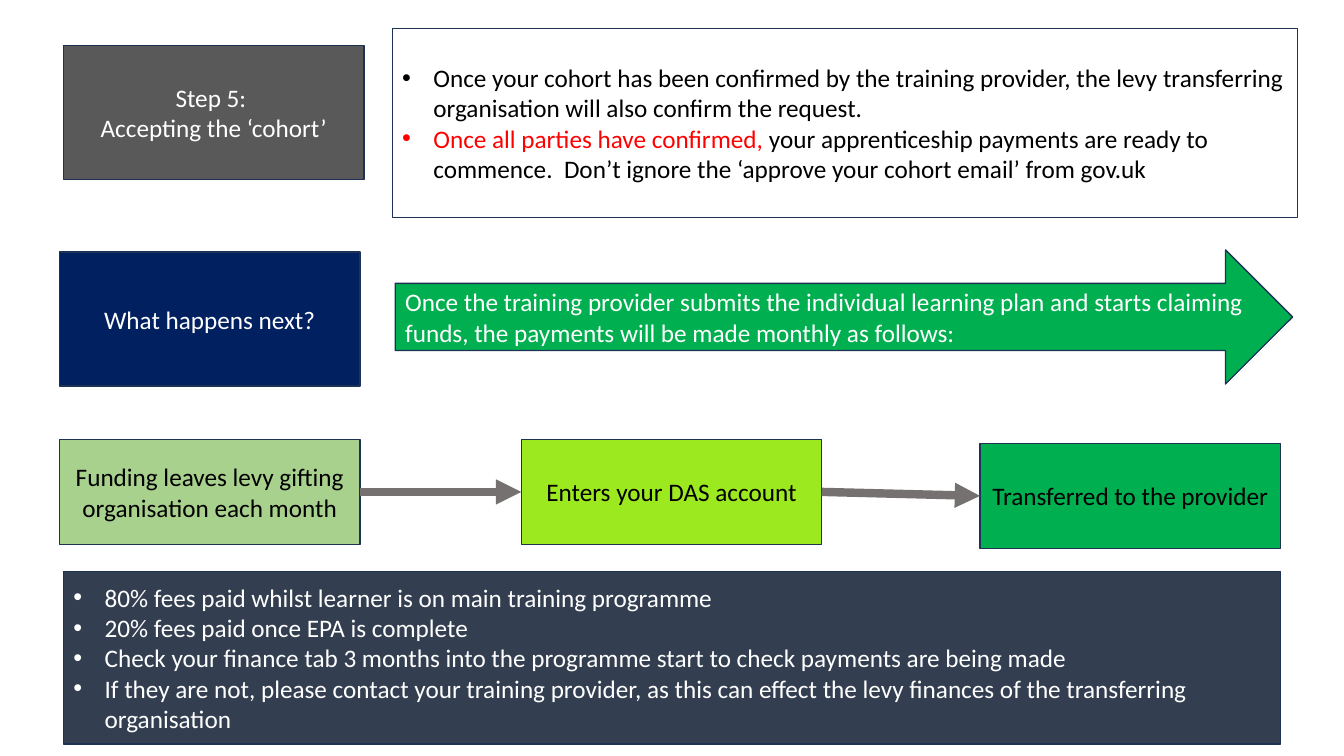
import dataclasses

import lxml.etree
import pptx
import pptx.dml.color
import pptx.enum.shapes
import pptx.enum.text
import pptx.oxml.ns
import pptx.util

Inches = pptx.util.Inches
Shape = pptx.enum.shapes.MSO_SHAPE
Align = pptx.enum.text.PP_ALIGN
qn = pptx.oxml.ns.qn


@dataclasses.dataclass(frozen=True)
class Theme:
    font: str = "Calibri"
    size: int = 18
    outline_width: int = 1
    arrow_width: int = 6
    white: str = "FFFFFF"
    black: str = "000000"
    red: str = "FF0000"
    outline: str = "1E3256"
    arrow: str = "767171"
    charcoal: str = "595959"
    navy: str = "002060"
    slate: str = "333F50"
    green: str = "00B050"
    lime: str = "9CE91F"
    sage: str = "A9D18E"


def rgb(code):
    return pptx.dml.color.RGBColor.from_string(code)


class SlideBuilder:
    def __init__(self, page, theme):
        self.page = page
        self.theme = theme

    def box(self, area, paragraphs, fill=None, color=None, align=Align.CENTER,
            bullets=False, kind=Shape.FLOWCHART_PROCESS):
        box = self.page.shapes.add_shape(kind, *map(Inches, area))
        box.shadow.inherit = False
        if fill:
            box.fill.solid()
            box.fill.fore_color.rgb = rgb(fill)
        else:
            box.fill.background()
        box.line.color.rgb = rgb(self.theme.outline)
        box.line.width = pptx.util.Pt(self.theme.outline_width)
        frame = box.text_frame
        frame.word_wrap = True
        frame.vertical_anchor = pptx.enum.text.MSO_ANCHOR.MIDDLE
        for index, content in enumerate(paragraphs):
            para = frame.add_paragraph() if index else frame.paragraphs[0]
            self.fill_paragraph(para, content, color or self.theme.white, align, bullets)
        return box

    def fill_paragraph(self, para, content, color, align, bullets):
        para.alignment = align
        if bullets:
            self.add_bullet(para)
        para.font.name = self.theme.font
        para.font.size = pptx.util.Pt(self.theme.size)
        para.font.color.rgb = rgb(color)
        spans = [(content, None)] if isinstance(content, str) else content
        for text, span_color in spans:
            span = para.add_run()
            span.text = text
            if span_color:
                span.font.color.rgb = rgb(span_color)

    def add_bullet(self, para):
        properties = para._p.get_or_add_pPr()
        indent = Inches(0.31)
        properties.set("marL", str(indent))
        properties.set("indent", str(-indent))
        lxml.etree.SubElement(properties, qn("a:buFont"), typeface="Arial")
        lxml.etree.SubElement(properties, qn("a:buChar"), char="•")

    def arrow(self, source, target):
        arrow = self.page.shapes.add_connector(
            pptx.enum.shapes.MSO_CONNECTOR.STRAIGHT, 0, 0, 0, 0)
        arrow.begin_connect(source, 3)
        arrow.end_connect(target, 1)
        arrow.line.color.rgb = rgb(self.theme.arrow)
        arrow.line.width = pptx.util.Pt(self.theme.arrow_width)
        lxml.etree.SubElement(arrow.line._get_or_add_ln(), qn("a:tailEnd"), type="triangle")
        lxml.etree.SubElement(arrow._element.spPr, qn("a:effectLst"))


def main():
    deck = pptx.Presentation()
    deck.slide_width = Inches(13.33)
    deck.slide_height = Inches(7.5)
    theme = Theme()
    builder = SlideBuilder(deck.slides.add_slide(deck.slide_layouts[6]), theme)

    builder.box((0.63, 0.45, 2.98, 1.33), ["Step 5: ", "Accepting the ‘cohort’"],
                theme.charcoal)
    builder.box((3.89, 0.28, 8.98, 1.88), [
        "Once your cohort has been confirmed by the training provider, "
        "the levy transferring organisation will also confirm the request.",
        [("Once all parties have confirmed,", theme.red),
         (" your apprenticeship payments are ready to commence.  "
          "Don’t ignore the ‘approve your cohort email’ from gov.uk", theme.black)],
    ], color=theme.black, align=Align.LEFT, bullets=True)

    builder.box((0.59, 2.5, 2.98, 1.33), ["What happens next?"], theme.navy)
    builder.box((3.92, 2.48, 8.9, 1.33), [
        "Once the training provider submits the individual learning plan and starts "
        "claiming funds, the payments will be made monthly as follows:",
    ], theme.green, align=Align.LEFT, kind=Shape.RIGHT_ARROW)

    payment_steps = [
        (0.59, 4.36, theme.sage, "Funding leaves levy gifting organisation each month"),
        (5.17, 4.36, theme.lime, "Enters your DAS account"),
        (9.72, 4.4, theme.green, "Transferred to the provider"),
    ]
    step_boxes = [builder.box((left, top, 2.98, 1.04), [text], fill, theme.black)
                  for left, top, fill, text in payment_steps]

    builder.box((0.63, 5.67, 12.07, 1.71), [
        "80% fees paid whilst learner is on main training programme",
        "20% fees paid once EPA is complete",
        "Check your finance tab 3 months into the programme start "
        "to check payments are being made",
        "If they are not, please contact your training provider, as this can effect "
        "the levy finances of the transferring organisation",
    ], theme.slate, align=Align.LEFT, bullets=True)

    for source, target in zip(step_boxes, step_boxes[1:]):
        builder.arrow(source, target)

    deck.save("out.pptx")


if __name__ == "__main__":
    main()
